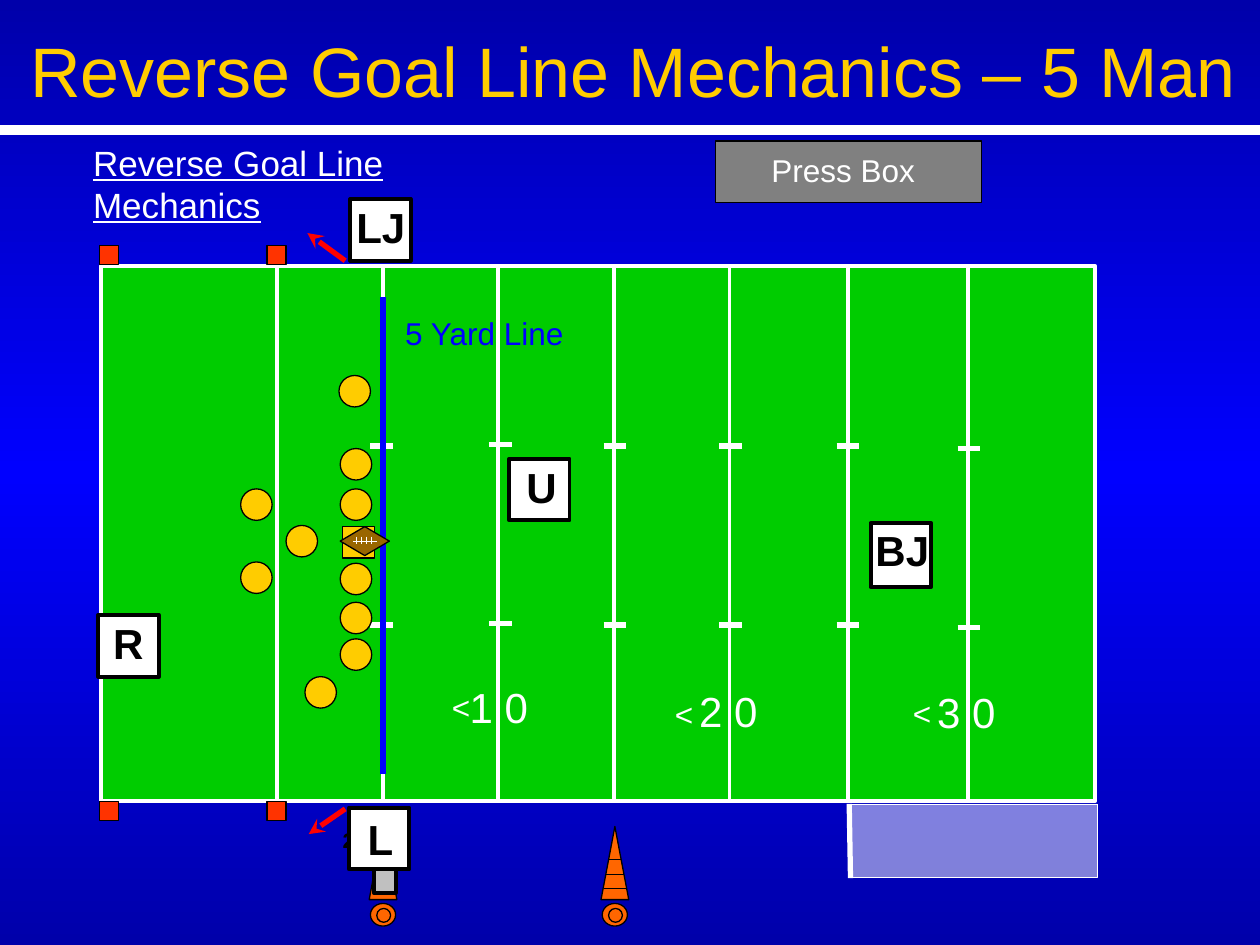
from copy import deepcopy

from lxml.etree import SubElement
from pptx import Presentation
from pptx.dml.color import RGBColor
from pptx.enum.dml import MSO_LINE
from pptx.enum.shapes import MSO_CONNECTOR as Connector, MSO_SHAPE as Shape
from pptx.enum.text import MSO_ANCHOR as Anchor, MSO_AUTO_SIZE as AutoSize, PP_ALIGN as Align
from pptx.oxml.ns import qn
from pptx.util import Inches, Pt

WHITE, BLACK, BLUE, RED = "FFFFFF", "000000", "0000FF", "FF0000"
GOLD, ORANGE, PYLON_RED = "FFCC00", "FF6600", "FF3300"
FIELD_TOP, FIELD_BOTTOM = 2.11, 6.36
YARD_LINES = [2.2, 3.04, 3.95, 4.87, 5.79, 6.73, 7.68]
HASH_MARKS = [(3.03, 3.54), (3.97, 3.53), (4.88, 3.54),
              (5.8, 3.54), (6.73, 3.54), (7.69, 3.56)]
YARD_NUMBERS = [("1 0", 3.53, 5.36, 3.48, 5.41),
                ("2 0", 5.35, 5.39, 5.25, 5.47),
                ("3 0", 7.24, 5.4, 7.14, 5.46)]
PLAYERS = [(2.7, 3.88), (2.7, 3.56), (2.7, 4.47), (2.7, 4.78), (2.27, 4.17),
           (2.42, 5.37), (2.7, 5.07), (2.69, 2.98), (1.91, 3.88), (1.91, 4.46)]
# name, box (left, top, height), text (left, top, width)
OFFICIALS = [("U", (4.04, 3.64, 0.49), (4.08, 3.61, 0.34)),
             ("BJ", (6.91, 4.15, 0.51), (6.85, 4.11, 0.66)),
             ("R", (0.78, 4.88, 0.49), (0.8, 4.85, 0.34)),
             ("L", (2.77, 6.41, 0.49), (2.82, 6.41, 0.58)),
             ("LJ", (2.78, 1.58, 0.49), (2.73, 1.55, 0.76))]


def color(value):
    return RGBColor.from_string(value)


def set_attributes(target, values):
    for name, value in values.items():
        setattr(target, name, value)


def add_shape(shapes, kind, left, top, width, height, fill=None, line=BLACK, weight=0.75):
    shape = shapes.add_shape(kind, Inches(left), Inches(top), Inches(width), Inches(height))
    shape.shadow.inherit = False
    if fill:
        shape.fill.solid()
        shape.fill.fore_color.rgb = color(fill)
    else:
        shape.fill.background()
    shape.line.color.rgb = color(line)
    shape.line.width = Pt(weight)
    return shape


def add_line(shapes, x1, y1, x2, y2, line=WHITE, weight=3.0, arrow=False):
    connector = shapes.add_connector(Connector.STRAIGHT, Inches(x1), Inches(y1),
                                     Inches(x2), Inches(y2))
    connector.line.color.rgb = color(line)
    connector.line.width = Pt(weight)
    if arrow:
        SubElement(connector.line._get_or_add_ln(), qn("a:tailEnd"), type="stealth")
    SubElement(connector._element.spPr, qn("a:effectLst"))
    return connector


def write_text(shape, text, size, fill, align=Align.LEFT, wrap=True, **font_values):
    frame = shape.text_frame
    set_attributes(frame, {"auto_size": AutoSize.NONE, "word_wrap": wrap,
                           "vertical_anchor": Anchor.TOP})
    paragraph = frame.paragraphs[0]
    paragraph.alignment = align
    run = paragraph.add_run()
    run.text = text
    set_attributes(run.font, {"name": "Arial", "size": Pt(size), **font_values})
    run.font.color.rgb = color(fill)


def add_text(shapes, text, left, top, width, height, size, fill, **values):
    box = shapes.add_textbox(Inches(left), Inches(top), Inches(width), Inches(height))
    write_text(box, text, size, fill, **values)
    return box


def set_background(slide):
    fill = slide.background.fill
    fill.gradient()
    fill.gradient_angle = 90
    stop_list = next(slide._element.iter(qn("a:gsLst")))
    stop_list.insert(1, deepcopy(stop_list[0]))
    for stop, position, value in zip(fill.gradient_stops, (0, 0.5, 1),
                                     ("0000AA", BLUE, "0000AA")):
        stop.position = position
        stop.color.rgb = color(value)


def add_title(slide):
    title = slide.shapes.title
    set_attributes(title, {"left": Inches(0.14), "top": Inches(0.17),
                           "width": Inches(9.78), "height": Inches(0.77)})
    write_text(title, "Reverse Goal Line Mechanics – 5 Man", 40, GOLD, wrap=False)
    add_line(slide.shapes, 0, 1.03, 10, 1.03, weight=6)
    heading = add_text(slide.shapes, "Reverse Goal Line Mechanics", 0.64, 1.07, 3.91, 0.43,
                       20, WHITE, underline=True)
    heading.text_frame.margin_right = Inches(1)


def add_press_box(shapes):
    add_shape(shapes, Shape.RECTANGLE, 5.68, 1.12, 2.11, 0.49, "808080")
    add_text(shapes, "Press Box", 6.02, 1.15, 1.34, 0.4, 18, WHITE,
             align=Align.RIGHT, wrap=False)


def add_field(shapes):
    add_shape(shapes, Shape.RECTANGLE, 0.8, FIELD_TOP, 7.89, FIELD_BOTTOM - FIELD_TOP,
              "00CC00", WHITE, 2.25)
    for x in YARD_LINES:
        add_line(shapes, x, FIELD_TOP, x, FIELD_BOTTOM, weight=2.25)
    for x in (0.79, 2.12):
        for y in (FIELD_TOP - 0.16, FIELD_BOTTOM):
            add_shape(shapes, Shape.RECTANGLE, x, y, 0.15, 0.15, PYLON_RED)
    for x, top in HASH_MARKS:
        for y in (top, top + 1.42):
            add_line(shapes, x - 0.09, y, x + 0.09, y)
    for number, left, top, mark_left, mark_top in YARD_NUMBERS:
        add_text(shapes, number, left, top, 0.76, 0.5, 24, WHITE, align=Align.RIGHT)
        add_text(shapes, "<", mark_left, mark_top, 0.35, 0.4, 18, WHITE,
                 align=Align.RIGHT, wrap=False)


def add_team_area(shapes):
    add_line(shapes, 6.74, 6.38, 6.75, 6.97)
    area = add_shape(shapes, Shape.RECTANGLE, 6.75, 6.38, 1.96, 0.58, WHITE, WHITE, 0.25)
    area.line.dash_style = MSO_LINE.ROUND_DOT
    fill_color = area._element.spPr.find(qn("a:solidFill"))[0]
    SubElement(fill_color, qn("a:alpha"), val="50000")


def add_cone(slide_shapes, x):
    shapes = slide_shapes.add_group_shape().shapes
    add_shape(shapes, Shape.ISOSCELES_TRIANGLE, x - 0.11, 6.56, 0.22, 0.58, ORANGE)
    add_shape(shapes, Shape.OVAL, x - 0.1, 7.17, 0.2, 0.18, ORANGE)
    for y, half in ((6.82, 0.05), (6.94, 0.07), (7.05, 0.09)):
        add_line(shapes, x - half, y, x + half, y, BLACK, 0.75)
    add_shape(shapes, Shape.OVAL, x - 0.05, 7.21, 0.11, 0.11)


def add_football(slide_shapes):
    shapes = slide_shapes.add_group_shape().shapes
    add_shape(shapes, Shape.FLOWCHART_DECISION, 2.7, 4.18, 0.39, 0.23, "996600")
    add_line(shapes, 2.8, 4.3, 2.99, 4.3, weight=0.75)
    for lace in range(4):
        x = 2.83 + 0.04 * lace
        add_line(shapes, x, 4.26, x, 4.32, weight=0.75)


def add_offense(shapes):
    add_shape(shapes, Shape.RECTANGLE, 2.72, 4.18, 0.25, 0.25, GOLD)
    for left, top in PLAYERS:
        add_shape(shapes, Shape.OVAL, left, top, 0.25, 0.25, GOLD)
    add_football(shapes)


def add_down_marker(shapes):
    add_shape(shapes, Shape.RECTANGLE, 2.97, 6.9, 0.17, 0.19, "C0C0C0", weight=2.25)
    add_text(shapes, "2", 2.62, 6.52, 0.29, 0.3, 12, BLACK, bold=True)


def add_official(slide_shapes, name, box, label):
    shapes = slide_shapes.add_group_shape().shapes
    left, top, height = box
    add_shape(shapes, Shape.RECTANGLE, left, top, 0.48, height, WHITE, weight=2.25)
    add_text(shapes, name, *label, 0.5, 24, BLACK, bold=True)


def main():
    presentation = Presentation()
    set_attributes(presentation, {"slide_width": Inches(10), "slide_height": Inches(7.5)})
    slide = presentation.slides.add_slide(presentation.slide_layouts[5])
    shapes = slide.shapes
    set_background(slide)
    add_title(slide)
    add_press_box(shapes)
    add_field(shapes)
    add_team_area(shapes)
    for x in (3.04, 4.88):
        add_cone(shapes, x)
    add_line(shapes, 3.04, 2.36, 3.04, 6.14, BLUE)
    add_text(shapes, "5 Yard Line", 3.09, 2.44, 1.48, 0.4, 18, BLUE,
             align=Align.RIGHT, wrap=False)
    add_offense(shapes)
    add_down_marker(shapes)
    add_line(shapes, 2.74, 2.07, 2.44, 1.85, RED, arrow=True)
    add_line(shapes, 2.74, 6.42, 2.45, 6.62, RED, arrow=True)
    for name, box, label in OFFICIALS:
        add_official(shapes, name, box, label)
    presentation.save("out.pptx")


if __name__ == "__main__":
    main()
